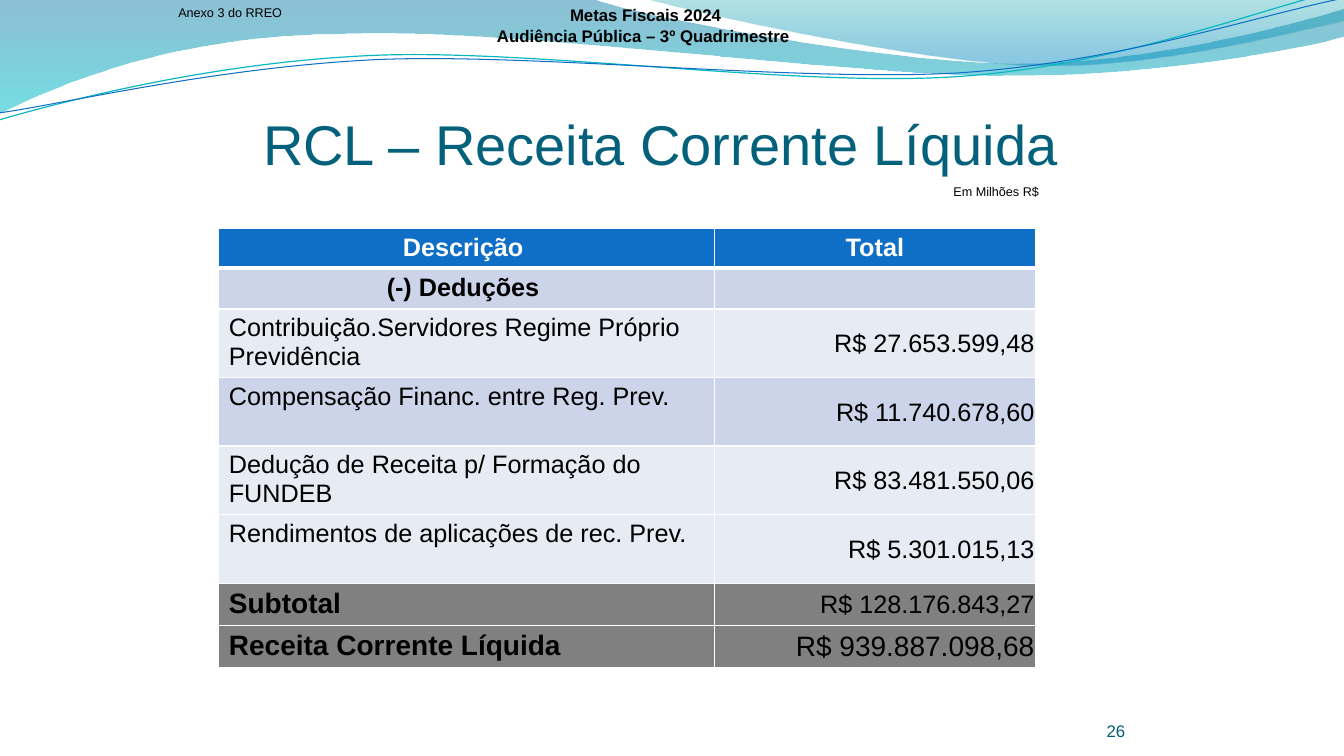
from pptx import Presentation
from pptx.dml.color import RGBColor
from pptx.enum.text import MSO_ANCHOR, MSO_AUTO_SIZE, PP_ALIGN
from pptx.oxml import parse_xml
from pptx.oxml.ns import nsdecls, qn
from pptx.util import Inches, Pt

WIDTH, HEIGHT = Inches(13.33), Inches(7.5)
FONT = "Arial"
COLORS = {
    "title": "04617B", "page": "035C75", "text": "000000", "white": "FFFFFF",
    "header": "0F6FC6", "band": "CCD4EA", "light": "E7EBF4", "total": "808080",
    "teal_line": "09B7BF", "deep_blue": "0074A0", "cyan": "00C4CD",
    "sky": "008ABF", "teal": "00A0A8",
}
TEXT_INSETS = (0.1, 0.05, 0.1, 0.05)
VALUE_INSETS = (0.01, 0.01, 0.01, 0)
CURVE_TILT = 357.3

# Outlines in percent of the slide: one point is a straight step, three a Bézier curve.
WIDE_WAVE = [
    [(0, 0)], [(44.04, -0.13)],
    [(47.56, 2.27), (66.39, 8.4), (75.84, 8.4)],
    [(85.3, 8.4), (95.87, 3.47), (100, 1.2)],
    [(100.15, 4.8)],
    [(98.35, 5.87), (87.02, 10.13), (74.57, 10)],
    [(62.19, 10), (38.18, 3.73), (25.73, 4.53)],
    [(12.9, 4.67), (4.58, 11.07), (-0.08, 15.07)],
    [(0, 0)],
]
RIGHT_WAVE = [
    [(47.94, -0.13)],
    [(50.94, 1.47), (68.19, 8.27), (76.89, 8.67)],
    [(85.6, 9.2), (96.17, 4.27), (100, 2.8)],
    [(100, 0)], [(47.94, -0.13)],
]
TEAL_CURVE = [
    [(-0.23, 11.68)],
    [(4.73, 9.56), (15.83, 5.41), (27.68, 5.48)],
    [(39.61, 5.53), (59.11, 12.39), (71.19, 11.92)],
    [(83.2, 11.47), (94.07, 4.76), (100, 2.87)],
]
BLUE_CURVE = [
    [(-0.15, 10.73)],
    [(4.65, 9.95), (16.35, 5.99), (28.36, 6.05)],
    [(40.29, 6.25), (59.64, 11.75), (71.57, 11.41)],
    [(83.57, 10.95), (94.3, 5.44), (100.23, 3.93)],
]

COLUMN_SHARES = (36.87, 23.9)
ROW_SHARES = {"header": 5.2, "item": 9.07, "total": 5.6}
# Row height, fill, description, its size, value, its size
ROWS = [
    ("header", "header", "Descrição ", 18, "Total", 18),
    ("header", "band", "(-) Deduções ", 18, "", 18),
    ("item", "light", "Contribuição.Servidores Regime Próprio Previdência", 18, "R$ 27.653.599,48", 18),
    ("item", "band", "Compensação Financ. entre Reg. Prev.", 18, "R$ 11.740.678,60", 18),
    ("item", "light", "Dedução de Receita p/ Formação do FUNDEB", 18, "R$ 83.481.550,06", 18),
    ("item", "light", "Rendimentos de aplicações de rec. Prev.", 18, "R$ 5.301.015,13", 18),
    ("total", "total", "Subtotal", 20, "R$ 128.176.843,27", 18),
    ("total", "total", "Receita Corrente Líquida", 20, "R$ 939.887.098,68", 20),
]


def color(name):
    return RGBColor.from_string(COLORS[name])


def across(share):
    return round(WIDTH * share / 100)


def down(share):
    return round(HEIGHT * share / 100)


def set_attributes(target, values):
    for name, value in values.items():
        setattr(target, name, value)


def set_insets(target, insets):
    sides = ("margin_left", "margin_top", "margin_right", "margin_bottom")
    set_attributes(target, dict(zip(sides, map(Inches, insets))))


def write_paragraph(paragraph, text, size, name, align, bold=False):
    paragraph.alignment = align
    run = paragraph.add_run()
    run.text = text
    set_attributes(run.font, {"name": FONT, "size": Pt(size), "bold": bold})
    run.font.color.rgb = color(name)


def add_text(slide, box, lines, size, name="text", align=PP_ALIGN.CENTER, anchor=MSO_ANCHOR.TOP,
             insets=TEXT_INSETS, bold=False, fit=MSO_AUTO_SIZE.NONE):
    left, top, width, height = box
    shape = slide.shapes.add_textbox(across(left), down(top), across(width), down(height))
    frame = shape.text_frame
    set_attributes(frame, {"word_wrap": True, "vertical_anchor": anchor, "auto_size": fit})
    set_insets(frame, insets)
    for index, line in enumerate(lines):
        paragraph = frame.add_paragraph() if index else frame.paragraphs[0]
        write_paragraph(paragraph, line, size, name, align, bold)


def add_outline(slide, segments, close):
    """Add a freeform whose three-point segments become Bézier curves."""
    start, *others = [(across(x), down(y)) for segment in segments for x, y in segment]
    builder = slide.shapes.build_freeform(*start)
    builder.add_line_segments(others, close=close)
    shape = builder.convert_to_shape()
    shape.shadow.inherit = False
    steps = iter(list(shape._element.iter(qn("a:lnTo"))))
    for segment in segments[1:]:
        group = [next(steps) for _ in segment]
        if len(group) == 3:
            curve = parse_xml(f'<a:cubicBezTo {nsdecls("a")}/>')
            group[0].addprevious(curve)
            for step in group:
                curve.append(step[0])
                step.getparent().remove(step)
    return shape


def add_wave(slide, segments, stops, angle):
    shape = add_outline(slide, segments, True)
    shape.line.fill.background()
    shape.fill.gradient()
    shape.fill.gradient_angle = angle
    for stop, (position, name, _) in zip(shape.fill.gradient_stops, stops):
        stop.position = position
        stop.color.rgb = color(name)
    stop_colors = shape._element.spPr.iter(qn("a:srgbClr"))
    for element, (_, _, opacity) in zip(stop_colors, stops):
        element.append(parse_xml(f'<a:alpha {nsdecls("a")} val="{opacity * 1000}"/>'))


def add_curve(slide, segments, name, width):
    shape = add_outline(slide, segments, False)
    shape.rotation = CURVE_TILT
    shape.fill.background()
    shape.line.color.rgb = color(name)
    shape.line.width = Pt(width)


def add_borders(cell, widths):
    properties = cell._tc.get_or_add_tcPr()
    for side, width in widths.items():
        properties.append(parse_xml(
            f'<a:ln{side} {nsdecls("a")} w="{Pt(width)}"><a:solidFill>'
            f'<a:srgbClr val="{COLORS["white"]}"/></a:solidFill></a:ln{side}>'))


def add_deductions_table(slide):
    heights = [down(ROW_SHARES[row[0]]) for row in ROWS]
    table = slide.shapes.add_table(len(ROWS), len(COLUMN_SHARES), across(16.28), down(30.27),
                                   across(sum(COLUMN_SHARES)), sum(heights)).table
    for column, share in zip(table.columns, COLUMN_SHARES):
        column.width = across(share)
    for index, (kind, fill, label, label_size, value, value_size) in enumerate(ROWS):
        table.rows[index].height = heights[index]
        is_heading = kind == "header"
        text_color = "white" if index == 0 else "text"
        for position, (text, size) in enumerate(((label, label_size), (value, value_size))):
            cell = table.cell(index, position)
            add_borders(cell, {"L": 0.96, "R": 0.96, "T": 3 if index == 1 else 0.96,
                               "B": 3 if index == 0 else 0.96})
            cell.fill.solid()
            cell.fill.fore_color.rgb = color(fill)
            align = PP_ALIGN.CENTER if is_heading else PP_ALIGN.LEFT
            if position and not is_heading:
                align = PP_ALIGN.RIGHT
                cell.vertical_anchor = MSO_ANCHOR.MIDDLE
                set_insets(cell, VALUE_INSETS)
            if text:
                bold = is_heading or (kind == "total" and not position)
                write_paragraph(cell.text_frame.paragraphs[0], text, size, text_color, align, bold)


def main():
    presentation = Presentation()
    set_attributes(presentation, {"slide_width": WIDTH, "slide_height": HEIGHT})
    slide = presentation.slides.add_slide(presentation.slide_layouts[6])

    add_wave(slide, WIDE_WAVE, [(0, "deep_blue", 45), (1, "cyan", 55)], 270)
    add_wave(slide, RIGHT_WAVE, [(0.2, "sky", 45), (1, "teal", 30)], 90)
    add_curve(slide, TEAL_CURVE, "teal_line", 0.85)
    add_curve(slide, BLUE_CURVE, "header", 0.75)

    add_text(slide, (14.55, 10.27, 69.17, 16.67), ["RCL – Receita Corrente Líquida"], 40, "title",
             anchor=MSO_ANCHOR.MIDDLE, insets=(0, 0.05, 0, 0))
    add_deductions_table(slide)
    add_text(slide, (77.49, 92.67, 6.23, 5.33), ["26"], 12, "page", PP_ALIGN.RIGHT,
             MSO_ANCHOR.BOTTOM, (0, 0, 0, 0))
    grow = MSO_AUTO_SIZE.SHAPE_TO_FIT_TEXT
    add_text(slide, (70.18, 23.65, 7.88, 3.33), ["Em Milhões R$"], 9, fit=grow)
    add_text(slide, (12.53, 0, 10.2, 3.33), ["Anexo 3 do RREO"], 9, align=PP_ALIGN.LEFT, fit=grow)
    add_text(slide, (35.33, 0, 25.43, 6.67),
             ["Metas Fiscais 2024", "Audiência Pública – 3º Quadrimestre "], 12,
             anchor=MSO_ANCHOR.MIDDLE, bold=True, fit=grow)
    presentation.save("out.pptx")


if __name__ == "__main__":
    main()
